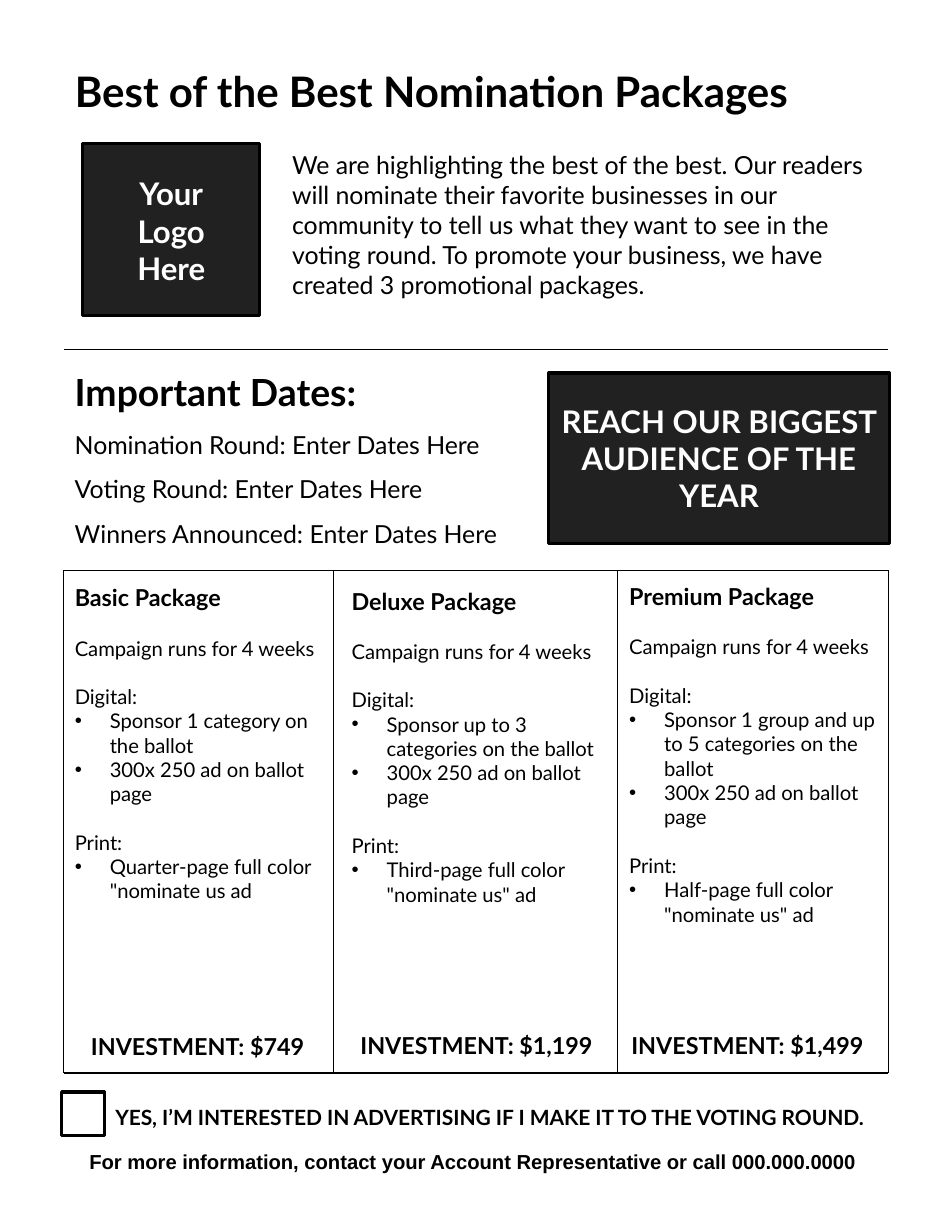
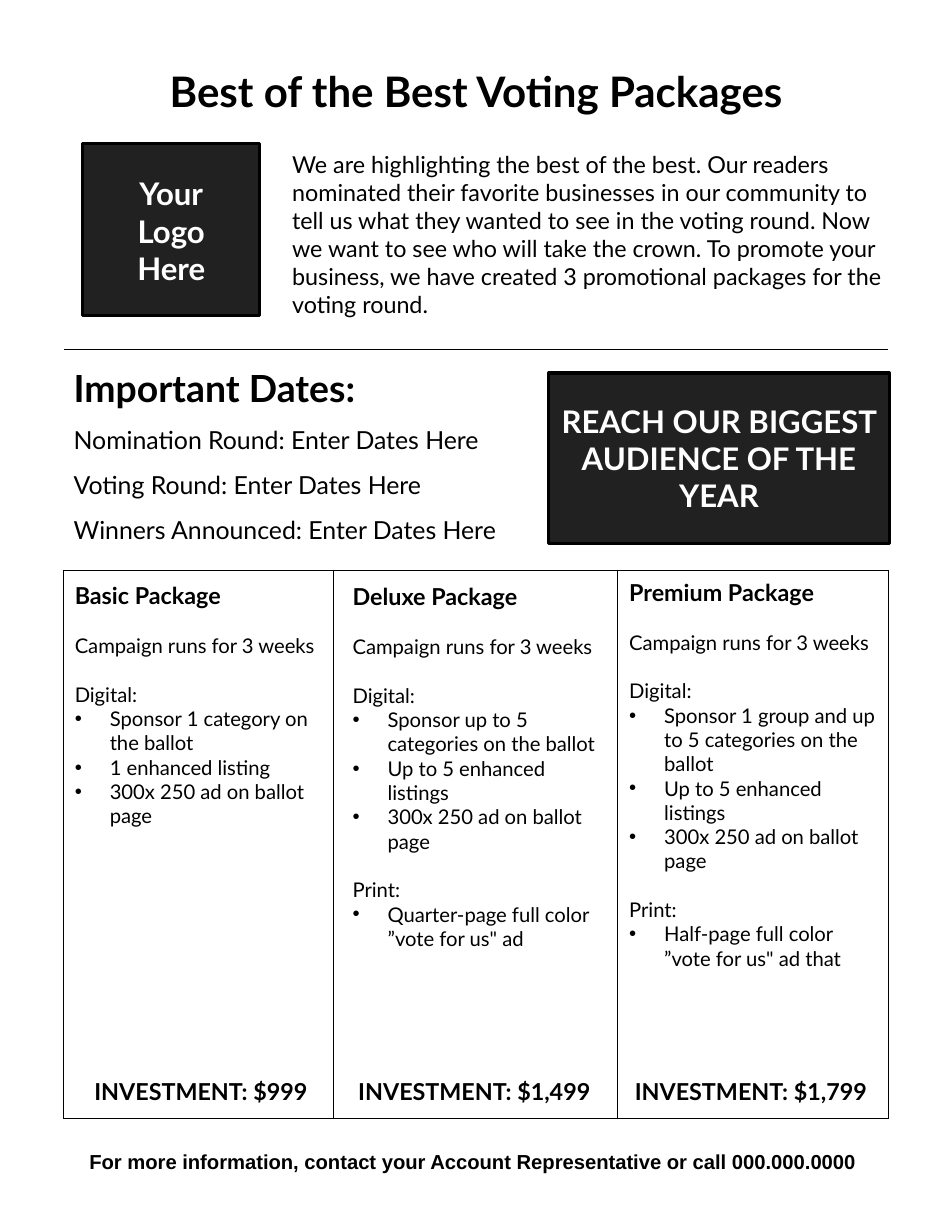
import pptx
import pptx.dml.color
import pptx.enum.shapes
import pptx.enum.text
import pptx.util
from lxml import etree
from pptx.oxml.ns import qn

Pt = pptx.util.Pt
RGBColor = pptx.dml.color.RGBColor
CENTER = pptx.enum.text.PP_ALIGN.CENTER
LEFT = pptx.enum.text.PP_ALIGN.LEFT

BLACK = RGBColor(0x00, 0x00, 0x00)
WHITE = RGBColor(0xFF, 0xFF, 0xFF)
CHARCOAL = RGBColor(0x21, 0x21, 0x21)

# Shared page geometry
EDGE_L, EDGE_R = 41, 571
PAGE_W = EDGE_R - EDGE_L
COL_W = 173.5
DIVIDERS = (214.5, 396.75)
RULE_Y, TABLE_Y = 224.6, 366.5
INSET = 7.2
BLANK_LINE = 15.6
BULLET_INDENT = 22.5

DATES = ["Nomination Round: Enter Dates Here",
         "Voting Round: Enter Dates Here",
         "Winners Announced: Enter Dates Here"]
CONTACT = ("For more information, contact your Account Representative "
           "or call 000.000.0000 ")
INTEREST = "YES, I’M INTERESTED IN ADVERTISING IF I MAKE IT TO THE VOTING ROUND."
AD = "300x 250 ad on ballot page"
GROUP = "Sponsor 1 group and up to 5 categories on the ballot"
LISTINGS = "Up to 5 enhanced listings"

# Each package: name, text position, digital items, print items,
# investment, investment position
NOMINATION = [
    ("Basic", (41, 368), ["Sponsor 1 category on the ballot", AD],
     ['Quarter-page full color "nominate us ad'], "$749", (40.3, 656.6)),
    ("Deluxe", (219, 370), ["Sponsor up to 3 categories on the ballot", AD],
     ['Third-page full color "nominate us" ad'], "$1,199", (219.6, 656)),
    ("Premium", (397.4, 367.2), [GROUP, AD],
     ['Half-page full color "nominate us" ad'], "$1,499", (393.8, 656)),
]
VOTING = [
    ("Basic", (41, 366.5),
     ["Sponsor 1 category on the ballot", "1 enhanced listing", AD],
     [], "$999", (42.5, 685.4)),
    ("Deluxe", (219.6, 367.2),
     ["Sponsor up to 5 categories on the ballot", LISTINGS, AD],
     ['Quarter-page full color ”vote for us" ad'], "$1,499", (218.2, 685.4)),
    ("Premium", (397.4, 364.3), [GROUP, LISTINGS, AD],
     ['Half-page full color ”vote for us" ad that'], "$1,799", (396, 685.4)),
]


def add_paragraph(tf, text, size, bold=False, color=BLACK, align=LEFT,
                  font="Lato", before=0, spacing=None, bullet=False):
    """Fill the empty first paragraph, or append a new one."""
    p = tf.paragraphs[0] if not tf.text else tf.add_paragraph()
    p.text = text
    if bullet:
        add_bullet(p)
    p.alignment = align
    if before:
        p.space_before = Pt(before)
    if spacing:
        p.line_spacing = spacing
    for r in p.runs:
        r.font.name = font
        r.font.size = Pt(size)
        r.font.bold = bold
        r.font.color.rgb = color


def add_bullet(p):
    pPr = p._p.get_or_add_pPr()
    pPr.set("marL", str(Pt(BULLET_INDENT)))
    pPr.set("indent", str(-Pt(BULLET_INDENT)))
    clr = etree.SubElement(pPr, qn("a:buClr"))
    etree.SubElement(clr, qn("a:srgbClr"), val=str(BLACK))
    etree.SubElement(pPr, qn("a:buFont"), typeface="Arial")
    etree.SubElement(pPr, qn("a:buChar"), char="•")


def add_frame(s, x, y, w, h):
    tf = s.shapes.add_textbox(Pt(x), Pt(y), Pt(w), Pt(h)).text_frame
    tf.word_wrap = True
    tf.margin_left = tf.margin_right = Pt(INSET)
    tf.margin_top = tf.margin_bottom = Pt(INSET)
    return tf


def add_text(s, x, y, w, h, text, size, **style):
    add_paragraph(add_frame(s, x, y, w, h), text, size, **style)


def add_box(s, x, y, w, h, fill):
    sp = s.shapes.add_shape(pptx.enum.shapes.MSO_SHAPE.RECTANGLE,
                            Pt(x), Pt(y), Pt(w), Pt(h))
    sp.shadow.inherit = False
    sp.fill.solid()
    sp.fill.fore_color.rgb = fill
    sp.line.color.rgb = BLACK
    sp.line.width = Pt(2)


def add_line(s, x1, y1, x2, y2):
    line = s.shapes.add_connector(pptx.enum.shapes.MSO_CONNECTOR.STRAIGHT,
                                  Pt(x1), Pt(y1), Pt(x2), Pt(y2))
    line.line.color.rgb = BLACK
    line.line.width = Pt(0.75)
    etree.SubElement(line._element.spPr, qn("a:effectLst"))


def add_header(s, title, title_align, intro, intro_size):
    add_text(s, EDGE_L, 34.6, PAGE_W, 48, title, 27, bold=True,
             align=title_align)
    add_text(s, 180.7, 89.3, 406.8, 116.6, intro, intro_size)
    add_line(s, EDGE_L, RULE_Y, EDGE_R, RULE_Y)
    add_box(s, 53.3, 92.2, 113.8, 110.9, CHARCOAL)
    tf = add_frame(s, 48.2, 105.1, 123.8, 101.5)
    for word in ("Your", "Logo", "Here"):
        add_paragraph(tf, word, 20, bold=True, color=WHITE, align=CENTER)


def add_dates(s, x, y):
    tf = add_frame(s, x, y, 385, 109.4)
    add_paragraph(tf, "Important Dates:", 24, bold=True)
    for date in DATES:
        add_paragraph(tf, date, 16, spacing=1.5)
    add_box(s, 352.8, 239.8, 218.9, 109.4, CHARCOAL)
    add_text(s, 352.8, 251.3, 218.9, 86.4,
             "REACH OUR BIGGEST AUDIENCE OF THE YEAR", 20,
             bold=True, color=WHITE, align=CENTER)


def add_grid(s, bottom):
    for y in (TABLE_Y, bottom):
        add_line(s, EDGE_L, y, EDGE_R, y)
    for x in (EDGE_L, *DIVIDERS, EDGE_R):
        add_line(s, x, TABLE_Y, x, bottom)


def add_package(s, weeks, name, pos, digital, printed, price, price_pos):
    tf = add_frame(s, *pos, COL_W, 288)
    add_paragraph(tf, f"{name} Package", 15, bold=True)
    add_paragraph(tf, f"Campaign runs for {weeks} weeks", 13,
                  before=BLANK_LINE)
    for label, items in (("Digital:", digital), ("Print:", printed)):
        if items:
            add_paragraph(tf, label, 13, before=BLANK_LINE)
        for item in items:
            add_paragraph(tf, item, 13, bullet=True)
    add_text(s, *price_pos, COL_W, 28.8, f"INVESTMENT: {price}", 15,
             bold=True, align=CENTER)


def add_packages(s, weeks, packages, bottom):
    add_grid(s, bottom)
    for package in packages:
        add_package(s, weeks, *package)


def add_contact(s):
    add_text(s, 40.3, 731.5, PAGE_W, 28.8, CONTACT, 13, bold=True,
             align=CENTER, font="Arial")


def main():
    prs = pptx.Presentation()
    prs.slide_width, prs.slide_height = Pt(612), Pt(792)
    blank = prs.slide_layouts[6]

    # Nomination packages
    s = prs.slides.add_slide(blank)
    add_header(s, "Best of the Best Nomination Packages", LEFT,
               "We are highlighting the best of the best. Our readers will "
               "nominate their favorite businesses in our community to tell "
               "us what they want to see in the voting round. To promote "
               "your business, we have created 3 promotional packages.", 16)
    add_dates(s, EDGE_L, 230.4)
    add_packages(s, 4, NOMINATION, 689.8)
    add_box(s, 39.6, 702, 27.4, 28, WHITE)
    add_text(s, 67, 702.7, PAGE_W, 28.8, INTEREST, 13.5, bold=True)
    add_contact(s)

    # Voting packages
    s = prs.slides.add_slide(blank)
    add_header(s, "Best of the Best Voting Packages", CENTER,
               "We are highlighting the best of the best. Our readers "
               "nominated their favorite businesses in our community to tell "
               "us what they wanted to see in the voting round. Now we want "
               "to see who will take the crown. To promote your business, we "
               "have created 3 promotional packages for the voting round.", 15)
    add_dates(s, 40.3, 227.5)
    add_packages(s, 3, VOTING, 719.3)
    add_contact(s)

    prs.save("out.pptx")


if __name__ == "__main__":
    main()
